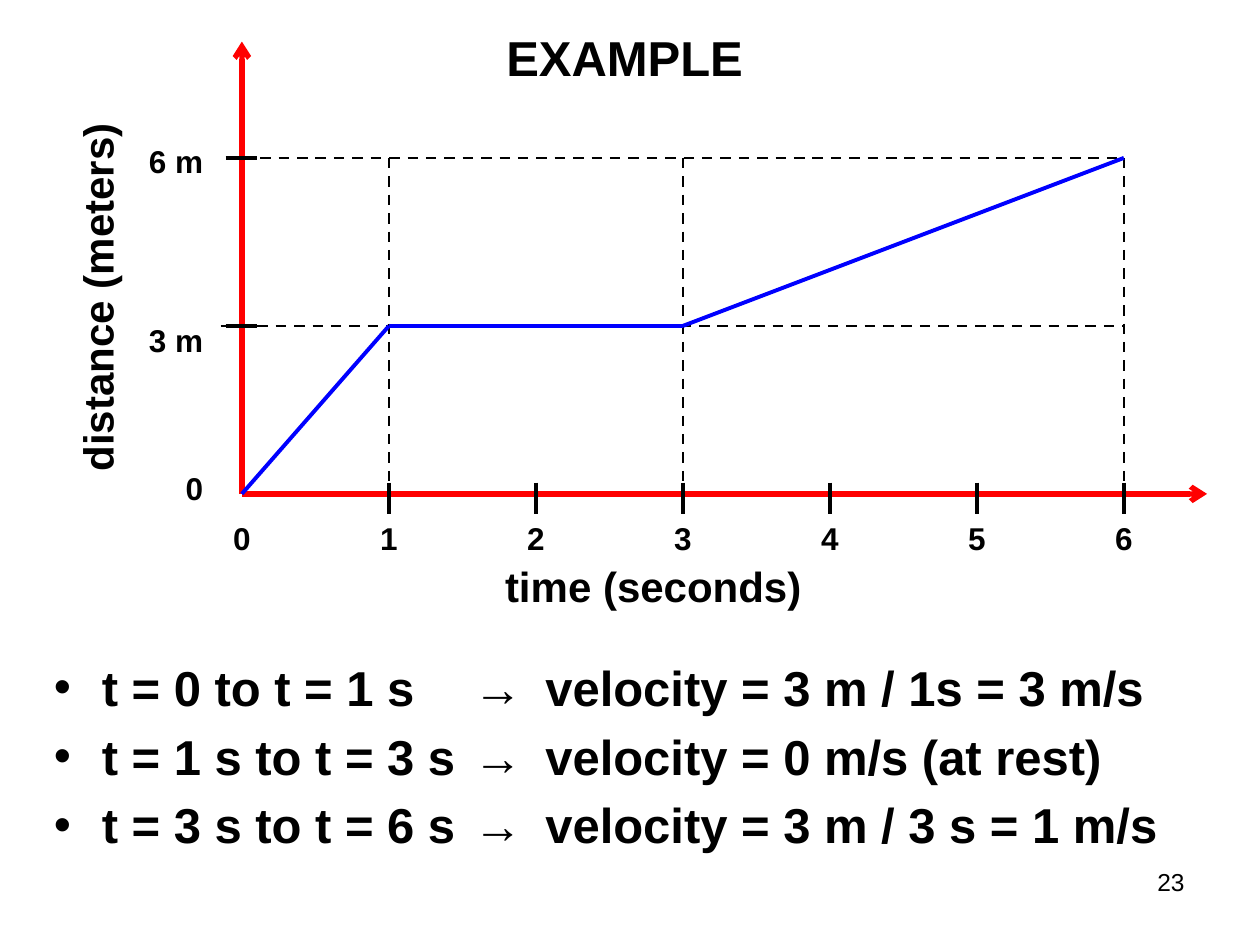
import pptx
import pptx.dml.color
import pptx.enum.dml
import pptx.enum.shapes
import pptx.enum.text
import pptx.oxml.ns
import pptx.util
from lxml import etree

Inches = pptx.util.Inches
Pt = pptx.util.Pt
qn = pptx.oxml.ns.qn
ALIGN = {
    "l": pptx.enum.text.PP_ALIGN.LEFT,
    "c": pptx.enum.text.PP_ALIGN.CENTER,
    "r": pptx.enum.text.PP_ALIGN.RIGHT,
}
BLACK, RED, BLUE = "000000", "FF0000", "0000FF"


def rgb(value):
    return pptx.dml.color.RGBColor.from_string(value)


def write(p, text, size=18, bold=True, color=BLACK, align="l"):
    p.alignment = ALIGN[align]
    r = p.add_run()
    r.text = text
    r.font.name = "Arial"
    r.font.size = Pt(size)
    r.font.bold = bold
    r.font.color.rgb = rgb(color)


class Deck:
    def __init__(self, width, height):
        self.prs = pptx.Presentation()
        self.prs.slide_width = Inches(width)
        self.prs.slide_height = Inches(height)
        self.s = self.prs.slides.add_slide(self.prs.slide_layouts[6])

    def line(self, x1, y1, x2, y2, color=BLACK, width=2.25, dash=False, arrow=False):
        kind = pptx.enum.shapes.MSO_CONNECTOR.STRAIGHT
        sp = self.s.shapes.add_connector(kind, *map(Inches, (x1, y1, x2, y2)))
        sp.line.color.rgb = rgb(color)
        sp.line.width = Pt(width)
        if dash:
            sp.line.dash_style = pptx.enum.dml.MSO_LINE.DASH
        if arrow:
            etree.SubElement(sp.line._get_or_add_ln(), qn("a:tailEnd"), type="arrow")
        etree.SubElement(sp._element.spPr, qn("a:effectLst"))

    def frame(self, x, y, w, h, wrap=True):
        tf = self.s.shapes.add_textbox(*map(Inches, (x, y, w, h))).text_frame
        tf.word_wrap = wrap
        return tf

    def text(self, x, y, w, h, text, wrap=True, vertical=False, **style):
        tf = self.frame(x, y, w, h, wrap)
        if vertical:
            tf._txBody.bodyPr.set("vert", "vert270")
        write(tf.paragraphs[0], text, **style)

    def bullets(self, x, y, w, h, items, tabs, indent=0.38, **style):
        tf = self.frame(x, y, w, h)
        for i, item in enumerate(items):
            p = tf.paragraphs[0] if i == 0 else tf.add_paragraph()
            write(p, item, **style)
            pPr = p._p.get_or_add_pPr()
            pPr.set("marL", str(Inches(indent)))
            pPr.set("indent", str(-Inches(indent)))
            before = etree.SubElement(pPr, qn("a:spcBef"))
            etree.SubElement(before, qn("a:spcPct"), val="20000")
            etree.SubElement(pPr, qn("a:buFont"), typeface="Arial")
            etree.SubElement(pPr, qn("a:buChar"), char="•")
            stops = etree.SubElement(pPr, qn("a:tabLst"))
            for tab in tabs:
                etree.SubElement(stops, qn("a:tab"), pos=str(Inches(tab)), algn="l")


# Graph scale: seconds across, metres up
X0, Y0 = 1.92, 3.92


def at_time(t):
    return X0 + t * 7 / 6


def at_distance(d):
    return Y0 - d * 4 / 9


def main():
    deck = Deck(10, 7.5)

    # Axes
    deck.line(X0, Y0, X0, 0.33, RED, 3, arrow=True)
    deck.line(X0, Y0, 9.58, Y0, RED, 3, arrow=True)

    # Time ticks and labels
    for t in range(7):
        x = at_time(t)
        if t:
            deck.line(x, 3.83, x, 4.08)
        deck.text(x - 0.2, 4.07, 0.4, 0.4, str(t), align="c")

    # Distance ticks and labels
    for d in (3, 6):
        deck.line(1.79, at_distance(d), 2.04, at_distance(d))
    for label, y in (("6 m", 1.08), ("3 m", 2.5), ("0", 3.67)):
        deck.text(0.91, y, 0.8, 0.4, label, align="r")

    # Axis titles
    deck.text(3.91, 4.4, 2.55, 0.5, "time (seconds)", wrap=False, size=24)
    deck.text(0.52, 0.98, 0.6, 2.86, "distance (meters)", wrap=False,
              vertical=True, size=24)

    # Dashed guides
    for t in (1, 3, 6):
        deck.line(at_time(t), at_distance(6), at_time(t), 3.83, width=1.5, dash=True)
    for d, start in ((3, 1.75), (6, X0)):
        deck.line(start, at_distance(d), at_time(6), at_distance(d), width=1.5, dash=True)

    # Motion
    points = [(0, 0), (1, 3), (3, 3), (6, 6)]
    for (t1, d1), (t2, d2) in zip(points, points[1:]):
        deck.line(at_time(t1), at_distance(d1), at_time(t2), at_distance(d2), BLUE)

    # Title, velocities and slide number
    deck.text(3.92, 0.17, 2.08, 0.57, "EXAMPLE", wrap=False, size=28)
    deck.bullets(0.33, 5.17, 9, 1.6, [
        "t = 0 to t = 1 s\t→\tvelocity = 3 m / 1s = 3 m/s",
        "t = 1 s to t = 3 s\t→\tvelocity = 0 m/s (at rest)",
        "t = 3 s to t = 6 s\t→\tvelocity = 3 m / 3 s = 1 m/s",
    ], tabs=(3.33, 3.9), size=28)
    deck.text(7.17, 6.83, 2.33, 0.52, "23", size=14, bold=False, align="r")

    deck.prs.save("out.pptx")


if __name__ == "__main__":
    main()
